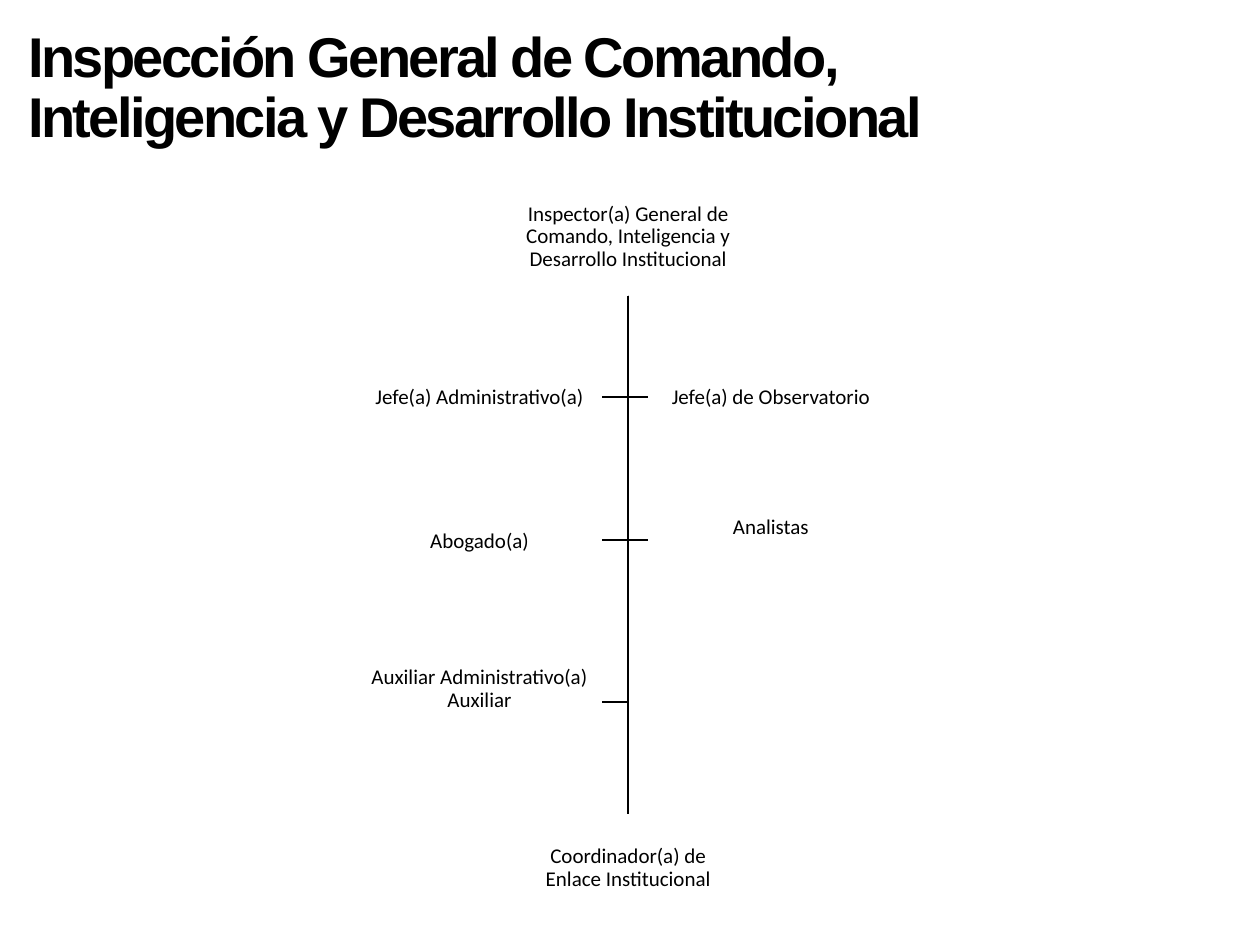
from dataclasses import dataclass

from lxml import etree
from pptx import Presentation
from pptx.dml.color import RGBColor
from pptx.enum.shapes import MSO_CONNECTOR, MSO_SHAPE
from pptx.enum.text import MSO_ANCHOR, MSO_AUTO_SIZE, PP_ALIGN
from pptx.oxml.ns import qn
from pptx.util import Pt

RECT = MSO_SHAPE.RECTANGLE
STRAIGHT = MSO_CONNECTOR.STRAIGHT
LEFT, CENTER = PP_ALIGN.LEFT, PP_ALIGN.CENTER
TOP, MIDDLE = MSO_ANCHOR.TOP, MSO_ANCHOR.MIDDLE
GROW = MSO_AUTO_SIZE.SHAPE_TO_FIT_TEXT


@dataclass(frozen=True)
class Theme:
    """Colours, fonts and sizes of the chart."""
    ink: RGBColor = RGBColor(0, 0, 0)
    paper: RGBColor = RGBColor(255, 255, 255)
    head: str = "Arial"
    body: str = "Calibri"
    big: float = 32
    small: float = 12
    line: float = 1
    inset: float = 0.72


THEME = Theme()
AXIS = 359
SIDE = 140


def write(frame, text, font=THEME.body, size=THEME.small, bold=False,
          align=CENTER, anchor=MIDDLE, space=0.9, track=None):
    """Fill a text frame with formatted text."""
    frame.word_wrap = True
    frame.vertical_anchor = anchor
    frame.text = text
    for para in frame.paragraphs:
        para.alignment = align
        para.line_spacing = space
        for run in para.runs:
            run.font.name = font
            run.font.size = Pt(size)
            run.font.bold = bold
            run.font.color.rgb = THEME.ink
            if track is not None:
                run.font._element.set("spc", str(round(track * 100)))


def add_title(slide, text):
    """Add the slide's heading."""
    box = slide.shapes.add_textbox(Pt(9), Pt(13), Pt(537), Pt(77))
    write(box.text_frame, text, font=THEME.head, size=THEME.big, bold=True,
          align=LEFT, anchor=TOP, track=-1.5)
    box.text_frame.auto_size = GROW


def add_post(slide, text, left, top, width, height, lift=0, space=0.9):
    """Add one post, its text raised by a deeper bottom inset."""
    box = slide.shapes.add_shape(RECT, Pt(left), Pt(top), Pt(width), Pt(height))
    box.shadow.inherit = False
    box.fill.solid()
    box.fill.fore_color.rgb = THEME.paper
    box.line.fill.background()
    frame = box.text_frame
    frame.margin_left = frame.margin_right = frame.margin_top = Pt(THEME.inset)
    frame.margin_bottom = Pt(THEME.inset + lift)
    write(frame, text, space=space)
    return box


def ink_line(shape):
    """Give a line the theme's colour and width."""
    shape.line.color.rgb = THEME.ink
    shape.line.width = Pt(THEME.line)


def add_trunk(slide, chief, foot):
    """Join the chief's post to the one at the foot."""
    trunk = slide.shapes.add_connector(STRAIGHT, 0, 0, 0, 0)
    trunk.begin_connect(chief, 2)
    trunk.end_connect(foot, 0)
    ink_line(trunk)
    etree.SubElement(trunk._element.spPr, qn("a:effectLst"))


def add_branch(slide, chief, post):
    """Draw an elbow from the chief's post to a side post."""
    axis = chief.left + chief.width // 2
    start = chief.top + chief.height
    level = post.top + post.height // 2
    edge = post.left if post.left > axis else post.left + post.width
    path = slide.shapes.build_freeform(axis, start)
    path.add_line_segments([(axis, level), (edge, level)], close=False)
    elbow = path.convert_to_shape()
    elbow.shadow.inherit = False
    elbow.fill.background()
    ink_line(elbow)


def add_tree(slide):
    """Build the posts and the lines between them."""
    chief = add_post(
        slide, "Inspector(a) General de Comando, Inteligencia y Desarrollo Institucional",
        AXIS - 73.5, 102, 147, 67)
    foot = add_post(slide, "Coordinador(a) de Enlace Institucional",
                    AXIS - 62, 465, 124, 62)
    west, east = AXIS - 15 - SIDE, AXIS + 11.5
    posts = [
        ("Jefe(a) Administrativo(a)", west, 198, 58, {}),
        ("Jefe(a) de Observatorio", east, 198, 58, {}),
        ("Abogado(a)", west, 285, 47, {"space": 1.0}),
        ("Analistas", east, 285, 47, {"lift": 14}),
        ("Auxiliar Administrativo(a)\vAuxiliar", west, 362, 78, {"lift": 14}),
    ]
    for text, left, top, height, style in posts:
        post = add_post(slide, text, left, top, SIDE, height, **style)
        add_branch(slide, chief, post)
    add_trunk(slide, chief, foot)


def main():
    """Build and save the slide."""
    deck = Presentation()
    deck.slide_width, deck.slide_height = Pt(720), Pt(540)
    slide = deck.slides.add_slide(deck.slide_layouts[6])
    add_tree(slide)
    add_title(slide, "Inspección General de Comando, Inteligencia y Desarrollo Institucional")
    deck.save("out.pptx")


if __name__ == "__main__":
    main()
